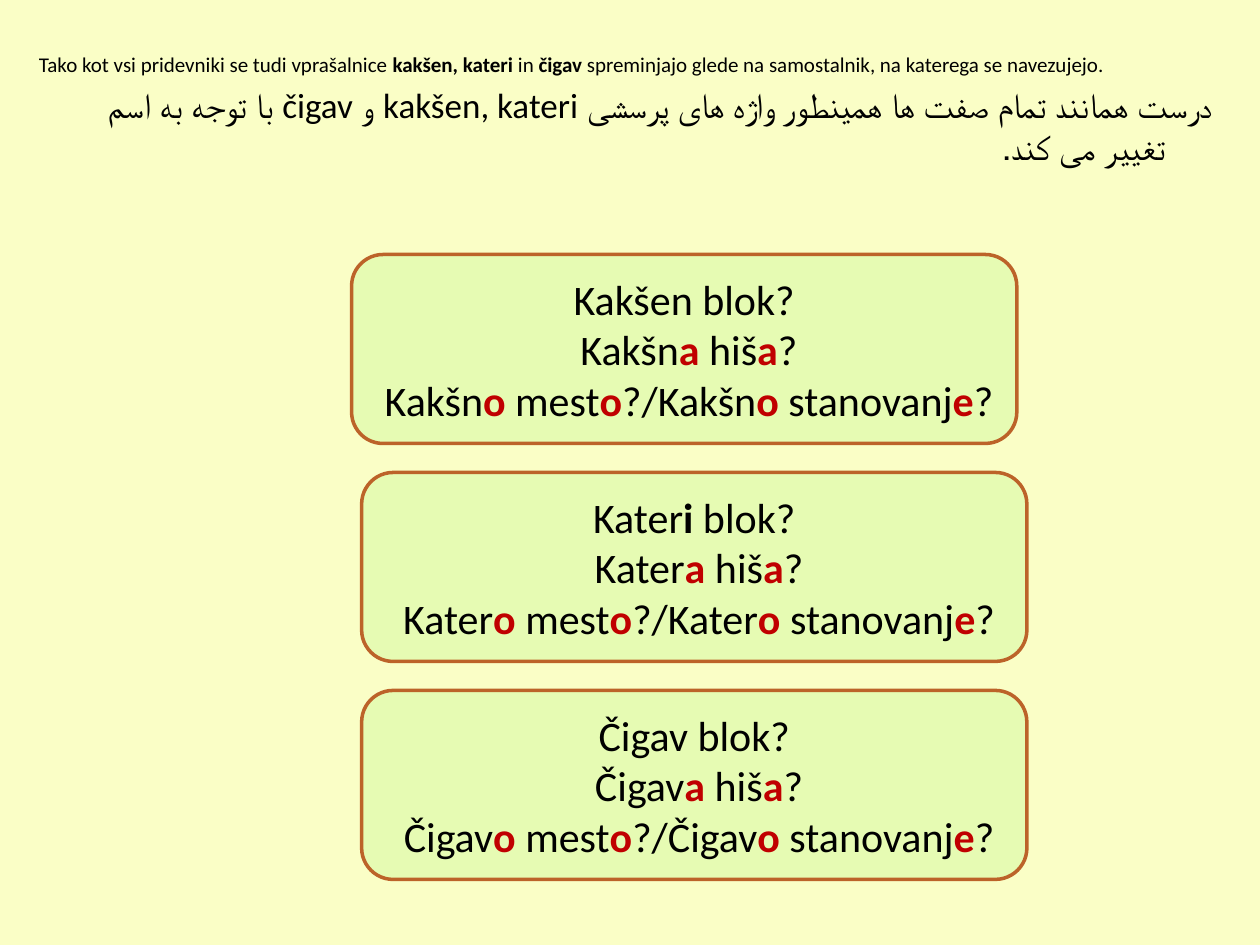
from pptx import Presentation
from pptx.dml.color import RGBColor
from pptx.enum.shapes import MSO_SHAPE
from pptx.enum.text import MSO_ANCHOR, PP_ALIGN
from pptx.util import Inches, Pt

ROUNDED = MSO_SHAPE.ROUNDED_RECTANGLE
TOP, MIDDLE = MSO_ANCHOR.TOP, MSO_ANCHOR.MIDDLE
LEFT, CENTER, RIGHT = PP_ALIGN.LEFT, PP_ALIGN.CENTER, PP_ALIGN.RIGHT

COLORS = {
    "background": "FAFEC6",
    "card": "E6FBB3",
    "border": "BC6329",
    "text": "000000",
    "ending": "C00000",
}
FONT = "Calibri"
CELL = Inches(0.1)  # the slide is a grid of 100 columns and 75 rows
COLUMNS, ROWS = 100, 75

# Run styles: (colour, bold)
PLAIN, BOLD, ENDING = ("text", False), ("text", True), ("ending", True)

INTRO_BOX = (2, 3.6, 95.3, 16.5)
INTRO = [
    ("Tako kot vsi pridevniki se tudi vprašalnice ", PLAIN),
    ("kakšen, kateri ", BOLD),
    ("in ", PLAIN),
    ("čigav", BOLD),
    (" spreminjajo glede na samostalnik, na katerega se navezujejo.", PLAIN),
]
INTRO_PERSIAN = [
    ("درست همانند تمام صفت ها همینطور واژه های پرسشی kakšen, kateri و čigav "
     "با توجه به اسم تغییر می کند.", PLAIN),
]

# Cards: left column, stem, masculine question
CARD_WIDTH, CARD_HEIGHT = 52.8, 15
CARD_TOP, CARD_PITCH = 20.2, 17.3
CARDS = [
    (27.9, "Kakšn", [("Kakšen blok?", PLAIN)]),
    (28.7, "Kater", [("Kater", PLAIN), ("i", BOLD), (" blok?", PLAIN)]),
    (28.7, "Čigav", [("Čigav blok?", PLAIN)]),
]


def color(name):
    return RGBColor.from_string(COLORS[name])


def grid(box):
    return [int(value * CELL) for value in box]


def add_runs(paragraph, runs, size, alignment):
    paragraph.alignment = alignment
    for text, (color_name, bold) in runs:
        run = paragraph.add_run()
        run.text = text
        run.font.name = FONT
        run.font.size = Pt(size)
        run.font.bold = bold
        run.font.color.rgb = color(color_name)


def prepare_frame(shape, anchor):
    frame = shape.text_frame
    frame.word_wrap = True
    frame.vertical_anchor = anchor
    return frame


def add_intro(slide, box):
    frame = prepare_frame(slide.shapes.add_textbox(*grid(box)), TOP)
    slovene, persian = frame.paragraphs[0], frame.add_paragraph()
    add_runs(slovene, INTRO, 12, LEFT)
    add_runs(persian, INTRO_PERSIAN, 20, RIGHT)
    for paragraph, space in ((slovene, 2.4), (persian, 4)):
        paragraph.space_before = Pt(space)
        properties = paragraph._p.get_or_add_pPr()
        properties.set("marL", str(Inches(0.38)))
        properties.set("indent", str(Inches(-0.37)))
    # Persian reads from right to left
    persian._p.get_or_add_pPr().set("rtl", "1")


def question_lines(stem, masculine):
    feminine = [(f" {stem}", PLAIN), ("a", ENDING), (" hiš", PLAIN),
                ("a", ENDING), ("?", PLAIN)]
    neuter = [(f" {stem}", PLAIN), ("o", ENDING), (" mest", PLAIN),
              ("o", ENDING), (f"?/{stem}", PLAIN), ("o", ENDING),
              (" stanovanj", PLAIN), ("e", ENDING), ("?", PLAIN)]
    return [masculine, feminine, neuter]


def add_card(slide, box, lines):
    card = slide.shapes.add_shape(ROUNDED, *grid(box))
    card.shadow.inherit = False
    card.fill.solid()
    card.fill.fore_color.rgb = color("card")
    card.line.color.rgb = color("border")
    card.line.width = Pt(2)
    frame = prepare_frame(card, MIDDLE)
    for index, runs in enumerate(lines):
        paragraph = frame.add_paragraph() if index else frame.paragraphs[0]
        add_runs(paragraph, runs, 24, CENTER)


def main():
    presentation = Presentation()
    presentation.slide_width = COLUMNS * CELL
    presentation.slide_height = ROWS * CELL
    slide = presentation.slides.add_slide(presentation.slide_layouts[6])
    slide.background.fill.solid()
    slide.background.fill.fore_color.rgb = color("background")

    # Explanation in two languages
    add_intro(slide, INTRO_BOX)

    # One card for each question word
    for index, (left, stem, masculine) in enumerate(CARDS):
        box = (left, CARD_TOP + index * CARD_PITCH, CARD_WIDTH, CARD_HEIGHT)
        add_card(slide, box, question_lines(stem, masculine))

    presentation.save("out.pptx")


if __name__ == "__main__":
    main()
